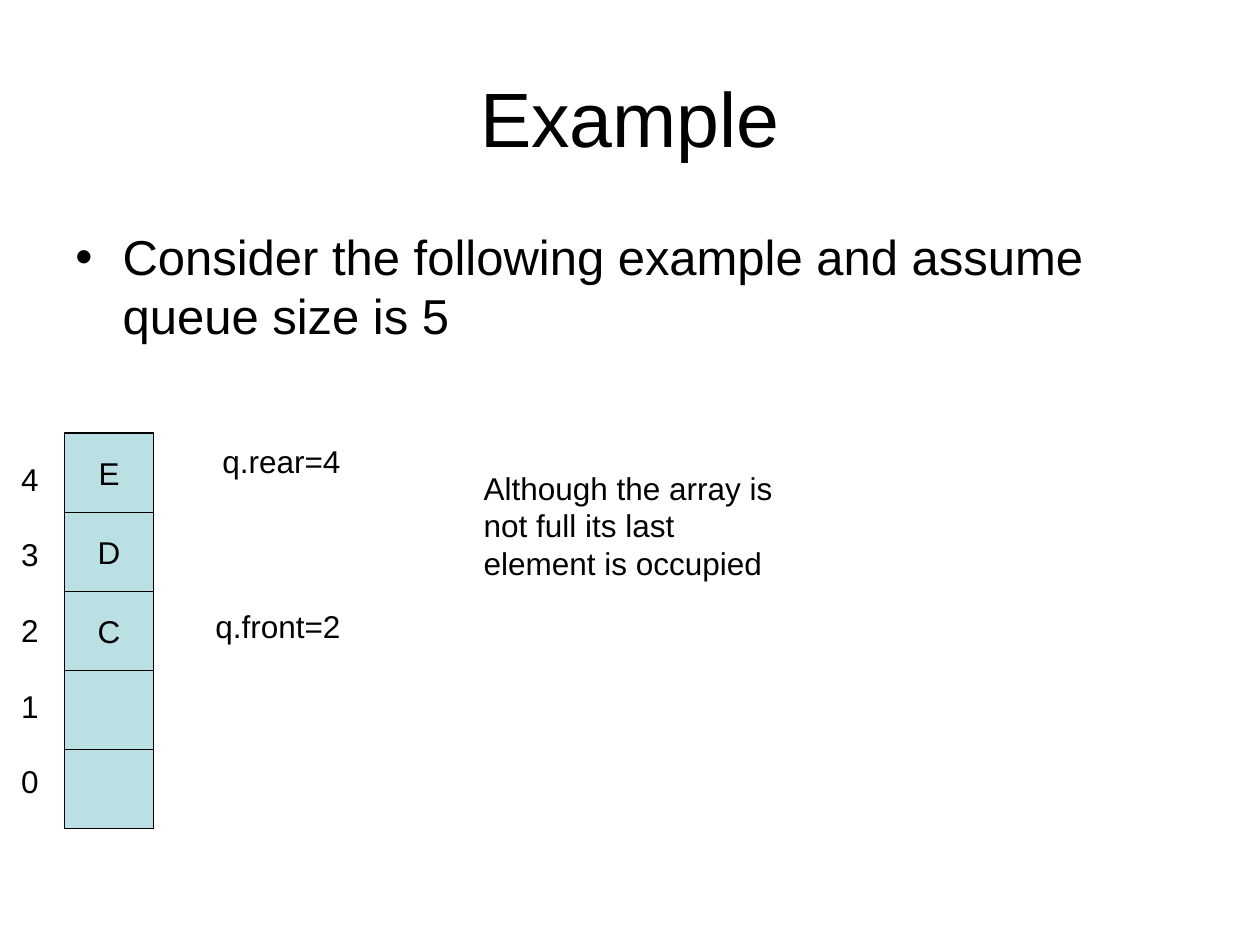
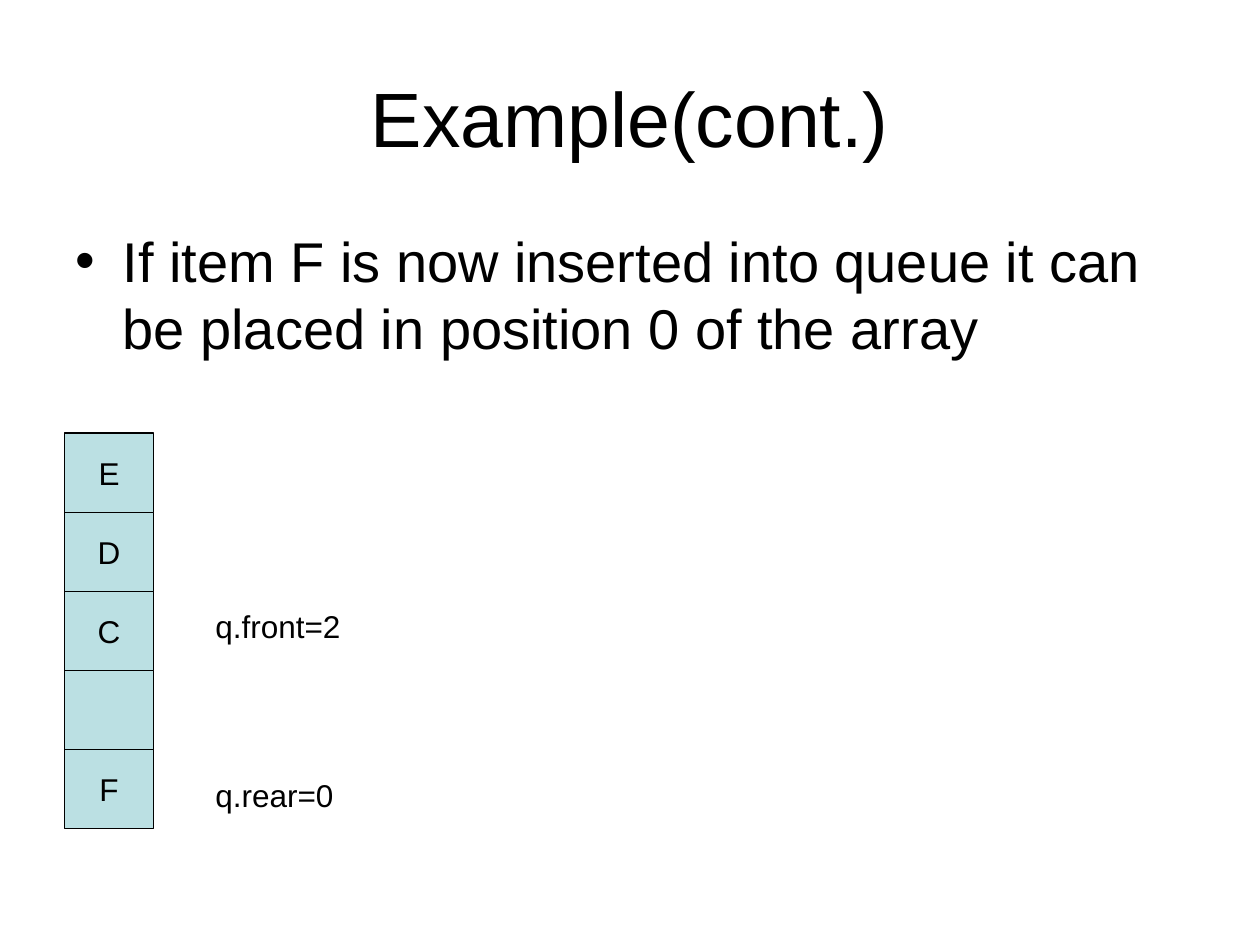
from dataclasses import dataclass

from lxml import etree
from pptx import Presentation
from pptx.dml.color import RGBColor
from pptx.enum.shapes import MSO_SHAPE
from pptx.enum.text import MSO_ANCHOR, MSO_AUTO_SIZE, PP_ALIGN
from pptx.oxml.ns import qn
from pptx.util import Pt

RECTANGLE = MSO_SHAPE.RECTANGLE
TOP, MIDDLE = MSO_ANCHOR.TOP, MSO_ANCHOR.MIDDLE
LEFT, CENTER = PP_ALIGN.LEFT, PP_ALIGN.CENTER
NO_FIT, GROW = MSO_AUTO_SIZE.NONE, MSO_AUTO_SIZE.SHAPE_TO_FIT_TEXT


@dataclass(frozen=True)
class Theme:
    font: str = "Arial"
    ink: RGBColor = RGBColor(0, 0, 0)
    cell: RGBColor = RGBColor(0xBB, 0xE0, 0xE3)
    background: RGBColor = RGBColor(0xFF, 0xFF, 0xFF)
    title_size: float = 44
    label_size: float = 18
    line_width: float = 0.75


THEME = Theme()
MARGIN, CONTENT_WIDTH = 36, 648
BULLET_INDENT = 27
CELL_LEFT, CELL_TOP = 36.8, 247.5
CELL_WIDTH, CELL_HEIGHT = 51, 45.2
POINTER_LEFT, FRONT_TOP = 116, 343.5


def write(shape, text, size=THEME.label_size, align=LEFT, anchor=TOP,
          wrap=False, fit=NO_FIT, gap=0):
    frame = shape.text_frame
    frame.word_wrap = wrap
    frame.auto_size = fit
    frame.vertical_anchor = anchor
    for number, line in enumerate(text.split("\n")):
        para = frame.add_paragraph() if number else frame.paragraphs[0]
        para.alignment = align
        para.space_after = Pt(gap)
        span = para.add_run()
        span.text = line
        span.font.name = THEME.font
        span.font.size = Pt(size)
        span.font.color.rgb = THEME.ink
    return frame


def add_text(page, text, left, top, width, height, **style):
    box = page.shapes.add_textbox(Pt(left), Pt(top), Pt(width), Pt(height))
    return write(box, text, **style)


def add_label(page, text, left, top, width, height=28.8, **style):
    return add_text(page, text, left, top, width, height, fit=GROW, **style)


def add_bullet(page, text, size, height):
    frame = add_text(page, text, MARGIN, 126, CONTENT_WIDTH, height,
                     size=size, wrap=True)
    properties = frame.paragraphs[0]._p.get_or_add_pPr()
    properties.set("marL", str(Pt(BULLET_INDENT)))
    properties.set("indent", str(-Pt(BULLET_INDENT)))
    etree.SubElement(properties, qn("a:buFont"), typeface=THEME.font)
    etree.SubElement(properties, qn("a:buChar"), char="•")


def add_queue(page, items):
    for row, item in enumerate(items):
        cell = page.shapes.add_shape(
            RECTANGLE, Pt(CELL_LEFT), Pt(CELL_TOP + row * CELL_HEIGHT),
            Pt(CELL_WIDTH), Pt(CELL_HEIGHT))
        cell.shadow.inherit = False
        cell.fill.solid()
        cell.fill.fore_color.rgb = THEME.cell
        cell.line.color.rgb = THEME.ink
        cell.line.width = Pt(THEME.line_width)
        if item:
            write(cell, item, align=CENTER, anchor=MIDDLE)


def add_page(deck, title, items):
    page = deck.slides.add_slide(deck.slide_layouts[6])
    page.background.fill.solid()
    page.background.fill.fore_color.rgb = THEME.background
    add_text(page, title, MARGIN, 21.6, CONTENT_WIDTH, 90,
             size=THEME.title_size, align=CENTER, anchor=MIDDLE, wrap=True)
    add_queue(page, items)
    add_label(page, "q.front=2", POINTER_LEFT, FRONT_TOP, 86)
    return page


def main():
    deck = Presentation()
    deck.slide_width, deck.slide_height = Pt(720), Pt(540)

    page = add_page(deck, "Example", ["E", "D", "C", "", ""])
    add_bullet(page, "Consider the following example and assume queue size is 5",
               size=28, height=76.5)
    add_label(page, "q.rear=4", 120, 249, 82)
    add_label(page, "Although the array is not full its last element is occupied",
              269.3, 264.3, 187, 72, wrap=True)
    add_label(page, "4\n3\n2\n1\n0", 5, 259.2, 24.5, 203.8, gap=21.6)

    page = add_page(deck, "Example(cont.)", ["E", "D", "C", "", "F"])
    add_bullet(page, "If item F is now inserted into queue it can be placed "
               "in position 0 of the array", size=32, height=356.4)
    add_label(page, "q.rear=0", POINTER_LEFT, 440, 82)

    deck.save("out.pptx")


if __name__ == "__main__":
    main()
